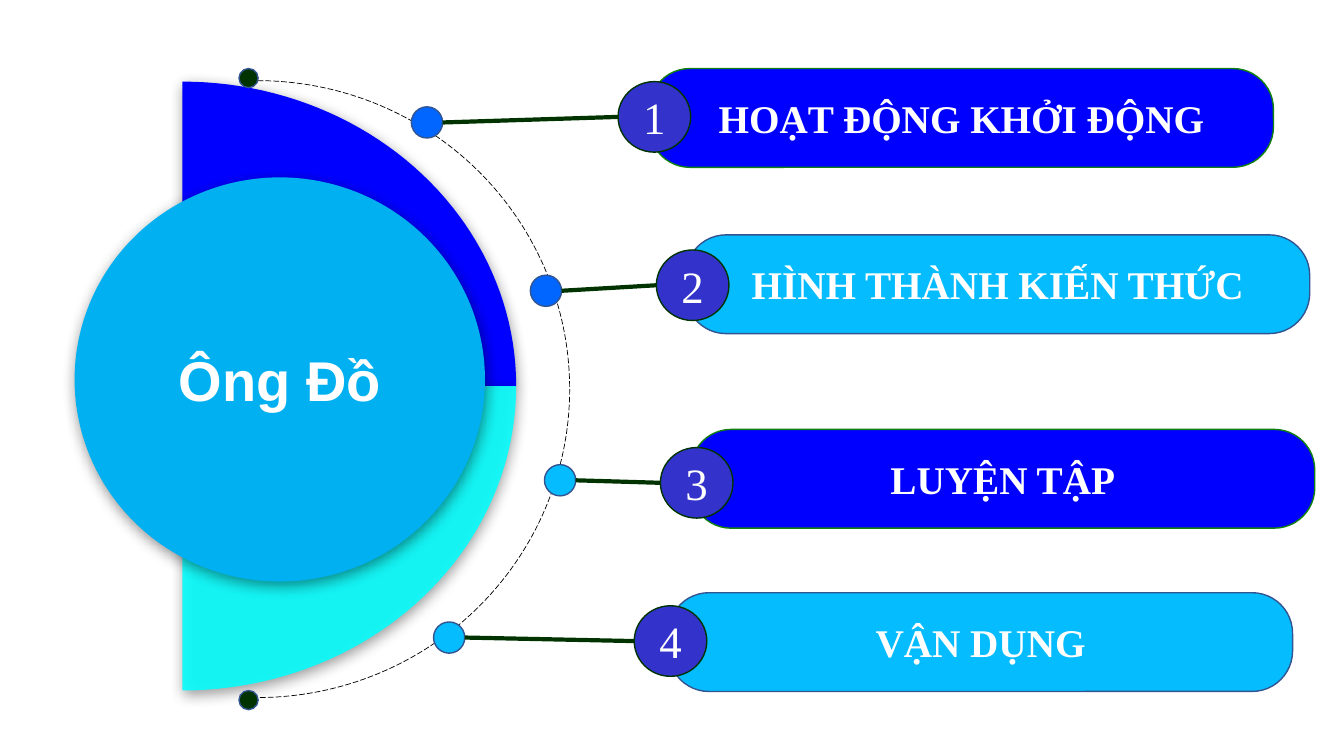
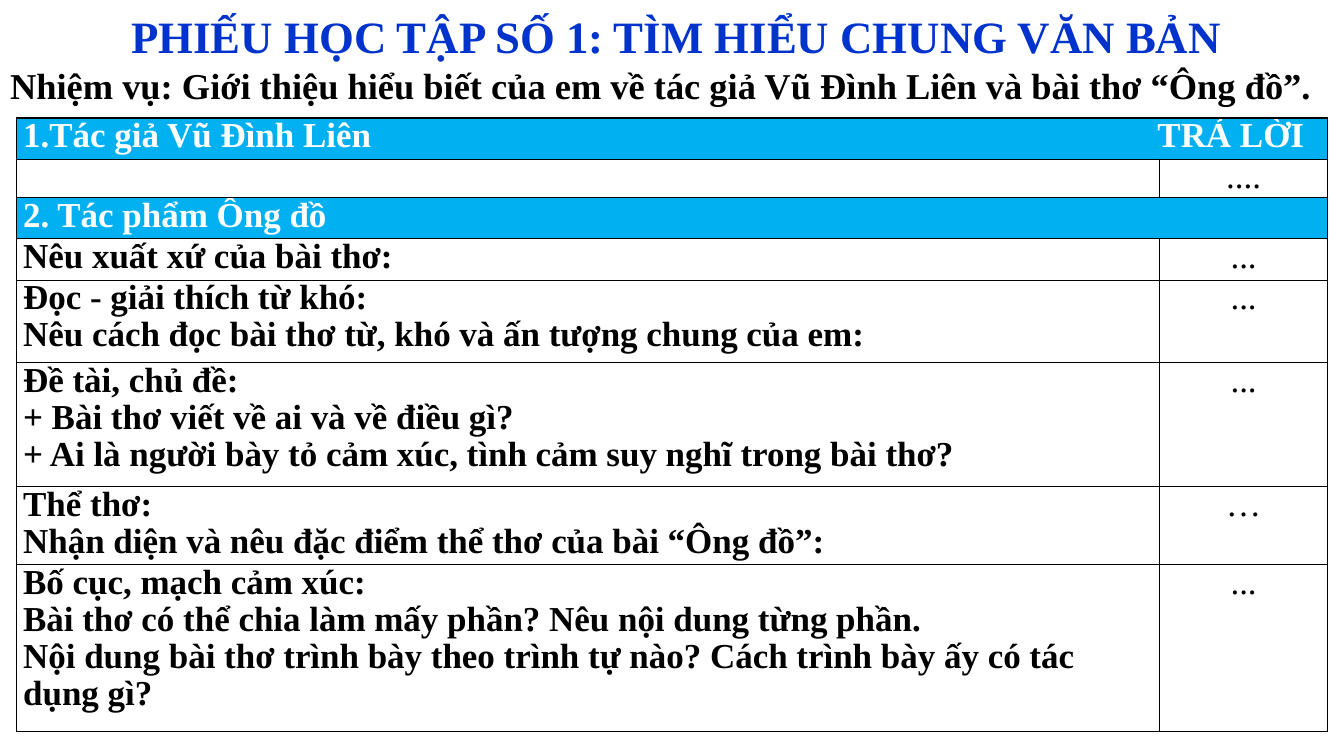
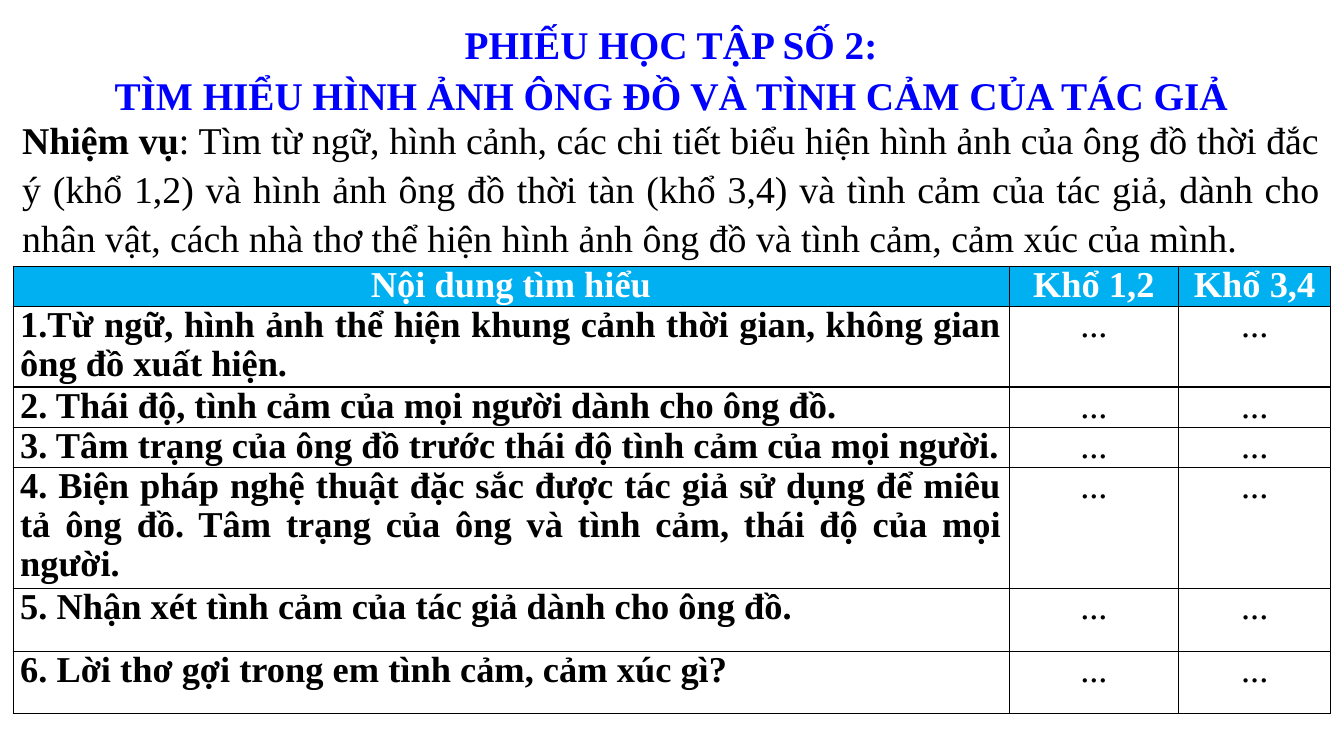
"""Build three lesson slides on the poem Ông Đồ: an agenda and two worksheets."""
import math

from lxml import etree
from pptx import Presentation
from pptx.dml.color import RGBColor
from pptx.enum import dml, shapes, text
from pptx.oxml import parse_xml
from pptx.oxml.ns import nsdecls, qn
from pptx.util import Inches, Pt

COLORS = {
    "white": "FFFFFF", "black": "000000", "blue": "0000FF", "title": "0033CC",
    "sky": "05BCFE", "header": "00B0F0", "aqua": "00FFFF", "dot": "0066FF",
    "badge": "3333CC", "forest": "003300", "green": "108010", "navy": "325491",
}
RGB = {name: RGBColor.from_string(value) for name, value in COLORS.items()}
SERIF = "Times New Roman"
ALIGN = text.PP_ALIGN
KIND = shapes.MSO_SHAPE


def write(frame, content, size, color, bold=True, align=ALIGN.CENTER, spacing=1.0, font=SERIF):
    """Put text in a frame and give every paragraph and run one style."""
    frame.text = content
    for paragraph in frame.paragraphs:
        paragraph.alignment = align
        paragraph.line_spacing = spacing
        paragraph.space_before = Pt(0)
        for run in paragraph.runs:
            run.font.name = font
            run.font.size = Pt(size)
            run.font.bold = bold
            run.font.color.rgb = RGB[color]


def draw(slide, kind, box, fill, line=None, width=1):
    """Add a flat preset shape with the given fill and outline."""
    shape = slide.shapes.add_shape(kind, *map(Inches, box))
    shape.shadow.inherit = False
    if fill:
        shape.fill.solid()
        shape.fill.fore_color.rgb = RGB[fill]
    else:
        shape.fill.background()
    if line:
        shape.line.color.rgb = RGB[line]
        shape.line.width = Pt(width)
    else:
        shape.line.fill.background()
    return shape


deck = Presentation()
deck.slide_width, deck.slide_height = Inches(13.33), Inches(7.5)

agenda = deck.slides.add_slide(deck.slide_layouts[6])
steps = [
    ("HOẠT ĐỘNG KHỞI ĐỘNG", (6.44, 0.68), (6.13, 0.81), (4.08, 1.06), "blue", "green", "dot"),
    ("HÌNH THÀNH KIẾN THỨC", (6.8, 2.33), (6.51, 2.48), (5.26, 2.73), "sky", "navy", "dot"),
    ("LUYỆN TẬP", (6.85, 4.26), (6.55, 4.44), (5.4, 4.61), "blue", "green", "sky"),
    ("VẬN DỤNG", (6.63, 5.88), (6.29, 6.01), (4.3, 6.17), "sky", "navy", "sky"),
]
for label, bar_at, _, _, fill, outline, _ in steps:
    bar = draw(agenda, KIND.ROUNDED_RECTANGLE, (*bar_at, 6.19, 0.98), fill, outline)
    bar.adjustments[0] = 0.41
    write(bar.text_frame, label, 28, "white")

raised = []
hub_x, hub_y, radius_x, radius_y = 1.81, 3.83, 3.31, 3.02
for direction, fill in ((-1, "blue"), (1, "aqua")):
    rim = [
        (Inches(hub_x + radius_x * math.cos(math.radians(angle))),
         Inches(hub_y + direction * radius_y * math.sin(math.radians(angle))))
        for angle in range(0, 91, 2)
    ]
    builder = agenda.shapes.build_freeform(Inches(hub_x), Inches(hub_y))
    builder.add_line_segments(rim, close=True)
    quarter = builder.convert_to_shape()
    quarter.shadow.inherit = False
    quarter.fill.solid()
    quarter.fill.fore_color.rgb = RGB[fill]
    quarter.line.fill.background()
    raised.append(quarter)
aqua = quarter._element.spPr.find(qn("a:solidFill"))[0]
etree.SubElement(aqua, qn("a:alpha")).set("val", "87000")

orbit = draw(agenda, KIND.ARC, (-0.54, 0.8, 6.19, 6.12), None, "black", 0.5)
orbit.adjustments[0], orbit.adjustments[1] = 162, 54.17
orbit.line.dash_style = dml.MSO_LINE.LONG_DASH
for end_y in (0.68, 6.85):
    draw(agenda, KIND.FLOWCHART_CONNECTOR, (2.37, end_y, 0.19, 0.19), "forest", "navy")

for number, (_, _, badge_at, dot_at, _, _, dot_fill) in enumerate(steps, 1):
    dot = draw(agenda, KIND.FLOWCHART_CONNECTOR, (*dot_at, 0.31, 0.31), dot_fill, "navy")
    badge = draw(agenda, KIND.FLOWCHART_CONNECTOR, (*badge_at, 0.72, 0.7), "badge", "forest")
    write(badge.text_frame, str(number), 32, "white", bold=False)
    link = agenda.shapes.add_connector(
        shapes.MSO_CONNECTOR.STRAIGHT,
        dot.left + dot.width, dot.top + dot.height // 2,
        badge.left, badge.top + badge.height // 2)
    link.line.color.rgb = RGB["forest"]
    link.line.width = Pt(3)
    etree.SubElement(link._element.spPr, qn("a:effectLst"))

poem = draw(agenda, KIND.FLOWCHART_CONNECTOR, (0.74, 1.76, 4.07, 4.01), "header")
write(poem.text_frame, "Ông Đồ", 40, "white", font="Arial")
raised.append(poem)
for part in raised:
    part._element.spPr.find(qn("a:effectLst")).append(parse_xml(
        f'<a:outerShdw {nsdecls("a")} blurRad="{Pt(10)}" dist="{Pt(3)}" dir="{82 * 60000}" '
        f'algn="t" rotWithShape="0"><a:srgbClr val="{COLORS["black"]}">'
        '<a:alpha val="43000"/></a:srgbClr></a:outerShdw>'))

worksheets = [
    {
        "title": "PHIẾU HỌC TẬP SỐ 1: TÌM HIỂU CHUNG VĂN BẢN",
        "title_style": (32, "title"), "title_box": (0, 0.05, 13.42, 0.55),
        "task": ("Nhiệm vụ: Giới thiệu hiểu biết của em về tác giả Vũ Đình Liên "
                 "và bài thơ “Ông đồ”.", ""),
        "task_size": 26, "task_box": (0, 0.6, 13.42, 0.45),
        "table_at": (0.16, 1.17), "columns": [11.34, 1.67], "cell_size": 25,
        "heights": [0.41, 0.38, 0.41, 0.41, 0.82, 1.23, 0.77, 1.66],
        "align": ALIGN.LEFT,
        "rows": [
            ["1.Tác giả Vũ Đình Liên\tTRẢ LỜI"],
            ["", "...."],
            ["2. Tác phẩm Ông đồ"],
            ["Nêu xuất xứ của bài thơ:", "..."],
            ["Đọc - giải thích từ khó:\n"
             "Nêu cách đọc bài thơ từ, khó và ấn tượng chung của em:", "..."],
            ["Đề tài, chủ đề:\n+ Bài thơ viết về ai và về điều gì?\n"
             "+ Ai là người bày tỏ cảm xúc, tình cảm suy nghĩ trong bài thơ?", "..."],
            ["Thể thơ:\nNhận diện và nêu đặc điểm thể thơ của bài “Ông đồ”:", "…"],
            ["Bố cục, mạch cảm xúc:\n"
             "Bài thơ có thể chia làm mấy phần? Nêu nội dung từng phần.\n"
             "Nội dung bài thơ trình bày theo trình tự nào? "
             "Cách trình bày ấy có tác dụng gì?", "..."],
        ],
    },
    {
        "title": "PHIẾU HỌC TẬP SỐ 2:\nTÌM HIỂU HÌNH ẢNH ÔNG ĐỒ VÀ TÌNH CẢM CỦA TÁC GIẢ",
        "title_style": (28, "blue"), "title_box": (0.12, 0.17, 13.07, 0.96),
        "task": ("Nhiệm vụ",
                 ": Tìm từ ngữ, hình cảnh, các chi tiết biểu hiện hình ảnh của ông đồ "
                 "thời đắc ý (khổ 1,2) và hình ảnh ông đồ thời tàn (khổ 3,4) và tình cảm "
                 "của tác giả, dành cho nhân vật, cách nhà thơ thể hiện hình ảnh ông đồ "
                 "và tình cảm, cảm xúc của mình."),
        "task_size": 27, "task_box": (0.12, 1.13, 13.07, 1.4),
        "table_at": (0.13, 2.64), "columns": [9.88, 1.68, 1.51], "cell_size": 26,
        "heights": [0.4, 0.8, 0.4, 0.4, 1.2, 0.62, 0.62],
        "align": ALIGN.JUSTIFY,
        "rows": [["Nội dung tìm hiểu", "Khổ 1,2", "Khổ 3,4"]] + [
            [question, "...", "..."] for question in (
                "1.Từ ngữ, hình ảnh thể hiện khung cảnh thời gian, không gian "
                "ông đồ xuất hiện.",
                "2. Thái độ, tình cảm của mọi người dành cho ông đồ.",
                "3. Tâm trạng của ông đồ trước thái độ tình cảm của mọi người.",
                "4. Biện pháp nghệ thuật đặc sắc được tác giả sử dụng để miêu tả ông đồ. "
                "Tâm trạng của ông và tình cảm, thái độ của mọi người.",
                "5. Nhận xét tình cảm của tác giả dành cho ông đồ.",
                "6. Lời thơ gợi trong em tình cảm, cảm xúc gì?",
            )
        ],
    },
]

for sheet in worksheets:
    slide = deck.slides.add_slide(deck.slide_layouts[1])
    heading, task = slide.placeholders
    for holder, box in ((heading, sheet["title_box"]), (task, sheet["task_box"])):
        holder.left, holder.top, holder.width, holder.height = map(Inches, box)
        frame = holder.text_frame
        frame.word_wrap = True
        frame.auto_size = text.MSO_AUTO_SIZE.NONE
        frame.vertical_anchor = text.MSO_ANCHOR.TOP
        frame.margin_top = frame.margin_bottom = 0
    size, color = sheet["title_style"]
    write(heading.text_frame, sheet["title"], size, color, spacing=1.07)

    lead, rest = sheet["task"]
    write(task.text_frame, lead, sheet["task_size"], "black", align=ALIGN.JUSTIFY, spacing=1.07)
    instruction = task.text_frame.paragraphs[0]
    if rest:
        detail = instruction.add_run()
        detail.text = rest
        detail.font.name = SERIF
        detail.font.size = Pt(sheet["task_size"])
        detail.font.bold = False
        detail.font.color.rgb = RGB["black"]
    properties = instruction._p.get_or_add_pPr()
    properties.set("marL", "0")
    properties.set("indent", "0")
    etree.SubElement(properties, qn("a:buNone"))

    columns, heights = sheet["columns"], sheet["heights"]
    table = slide.shapes.add_table(
        len(heights), len(columns), *map(Inches, sheet["table_at"]),
        Inches(sum(columns)), Inches(sum(heights))).table
    table.first_row = table.horz_banding = False
    for column, width in zip(table.columns, columns):
        column.width = Inches(width)
    for index, (row, height, answers) in enumerate(zip(table.rows, heights, sheet["rows"])):
        row.height = Inches(height)
        section = len(answers) == 1
        header = section or index == 0
        if section:
            table.cell(index, 0).merge(table.cell(index, len(columns) - 1))
        for position, cell in enumerate(row.cells):
            cell.margin_left = cell.margin_right = Inches(0.07)
            cell.margin_top = cell.margin_bottom = 0
            borders = cell._tc.get_or_add_tcPr()
            for side in ("lnL", "lnR", "lnT", "lnB"):
                borders.append(parse_xml(
                    f'<a:{side} {nsdecls("a")} w="{Pt(1)}"><a:solidFill>'
                    f'<a:srgbClr val="{COLORS["black"]}"/></a:solidFill></a:{side}>'))
            cell.fill.solid()
            cell.fill.fore_color.rgb = RGB["header" if header else "white"]
            if position < len(answers):
                first = position == 0
                align = sheet["align"] if first and (section or not header) else ALIGN.CENTER
                write(cell.text_frame, answers[position], sheet["cell_size"],
                      "white" if header else "black", header or first, align, 0.96)
            if section and position == 0:
                stops = etree.SubElement(
                    cell.text_frame.paragraphs[0]._p.get_or_add_pPr(), qn("a:tabLst"))
                stop = etree.SubElement(stops, qn("a:tab"))
                stop.set("pos", str(Inches(11.25)))
                stop.set("algn", "l")

deck.save("out.pptx")
